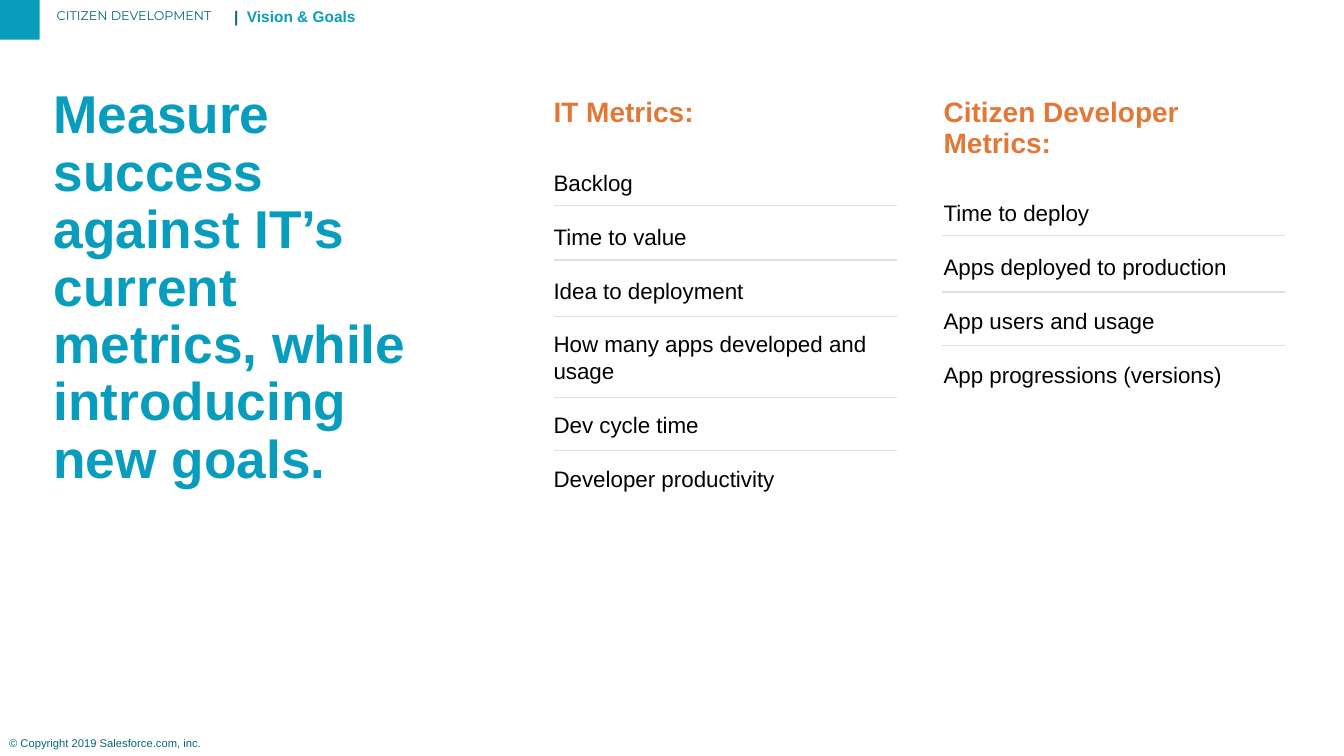
from pptx import Presentation
from pptx.dml.color import RGBColor
from pptx.enum.shapes import MSO_CONNECTOR, MSO_SHAPE
from pptx.oxml.ns import qn
from pptx.util import Cm, Pt
from lxml import etree

RECTANGLE = MSO_SHAPE.RECTANGLE
STRAIGHT = MSO_CONNECTOR.STRAIGHT

COLORS = {
    "teal": "089DBC",
    "dark_teal": "06687D",
    "orange": "E37735",
    "black": "000000",
    "rule": "E0E0E0",
}
INSET = 0.13


def color(name):
    return RGBColor.from_string(COLORS[name])


def add_box(slide, left, top, width, height):
    """Add an empty wrapping text box and return its text frame."""
    frame = slide.shapes.add_textbox(Cm(left), Cm(top), Cm(width), Cm(height)).text_frame
    frame.word_wrap = True
    frame.margin_left = frame.margin_right = Cm(INSET)
    frame.margin_top = frame.margin_bottom = Cm(INSET)
    return frame


def write(paragraph, text, *, size, fill, font="Arial", bold=False, spacing=1.0, before=0):
    """Append a formatted run to a paragraph."""
    paragraph.line_spacing = spacing
    if before:
        paragraph.space_before = Pt(before)
    run = paragraph.add_run()
    run.text = text
    run.font.name = font
    run.font.size = Pt(size)
    run.font.bold = bold
    run.font.color.rgb = color(fill)


def add_rule(slide, left, top, width):
    line = slide.shapes.add_connector(STRAIGHT, Cm(left), Cm(top), Cm(left + width), Cm(top))
    line.line.color.rgb = color("rule")
    line.line.width = Pt(1)
    etree.SubElement(line._element.spPr, qn("a:effectLst"))


def add_header(slide, left, top, side):
    # Corner square
    square = slide.shapes.add_shape(RECTANGLE, Cm(left), Cm(top), Cm(side), Cm(side))
    square.shadow.inherit = False
    square.fill.solid()
    square.fill.fore_color.rgb = color("teal")
    square.line.fill.background()

    # Deck name and section name
    deck = add_box(slide, left + 1.3, top + 0.15, 10.13, 0.69).paragraphs[0]
    write(deck, "CITIZEN DEVELOPMENT", size=9, fill="dark_teal", font="Montserrat", spacing=0.8)
    section = add_box(slide, left + 5.77, top + 0.15, 9.53, 0.69).paragraphs[0]
    write(section, "|  ", size=11, fill="dark_teal", bold=True, spacing=0.8)
    write(section, "Vision & Goals", size=11, fill="teal", bold=True, spacing=0.8)


def add_statement(slide, left, top, width, height):
    statement = add_box(slide, left, top, width, height).paragraphs[0]
    write(statement, "Measure success against IT’s current metrics, while introducing new goals.",
          size=38, fill="teal", bold=True, spacing=0.9)


def add_metrics(slide, left, top, width, height, heading, metrics, rule_indent, rule_offsets):
    """Place a heading, its metrics and the rules between them."""
    frame = add_box(slide, left, top, width, height)
    write(frame.paragraphs[0], heading, size=20, fill="orange", bold=True, spacing=0.9)
    for index, metric in enumerate(metrics):
        write(frame.add_paragraph(), metric, size=16, fill="black",
              before=19.2 if index else 28.8)
    for offset in rule_offsets:
        add_rule(slide, left + rule_indent, top + offset, 8.66)


def add_footer(slide, left, top, width, height):
    copyright_line = add_box(slide, left, top, width, height).paragraphs[0]
    write(copyright_line, "© Copyright 2019 Salesforce.com, inc.", size=8, fill="dark_teal")


def main():
    presentation = Presentation()
    presentation.slide_width = Cm(33.87)
    presentation.slide_height = Cm(19.05)
    slide = presentation.slides.add_slide(presentation.slide_layouts[6])

    add_header(slide, 0, 0, 1)
    add_statement(slide, 1.22, 2.08, 10.13, 12.04)
    add_metrics(slide, 13.82, 2.36, 9.17, 15.27, "IT Metrics:",
                ["Backlog", "Time to value", "Idea to deployment",
                 "How many apps developed and usage", "Dev cycle time",
                 "Developer productivity"],
                0.13, [2.82, 4.19, 5.61, 7.65, 8.99])
    add_metrics(slide, 23.65, 2.36, 8.66, 12.6, "Citizen Developer Metrics:",
                ["Time to deploy", "Apps deployed to production", "App users and usage",
                 "App progressions (versions)"],
                0.08, [3.58, 5, 6.35])
    add_footer(slide, 0.1, 18.42, 5.61, 0.56)

    presentation.save("out.pptx")


if __name__ == "__main__":
    main()
